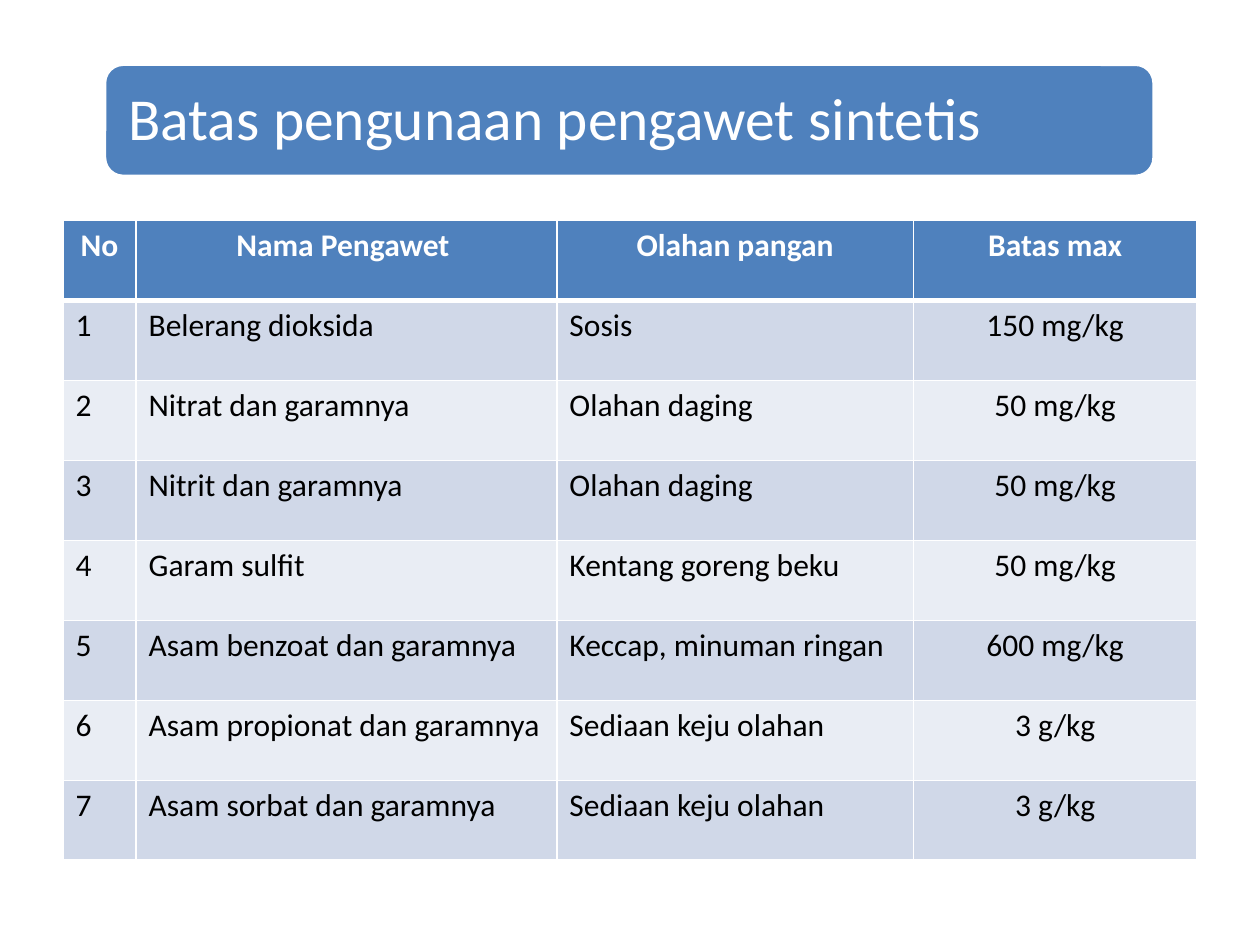
from lxml import etree
from pptx import Presentation
from pptx import util as u
from pptx.dml.color import RGBColor
from pptx.enum import shapes, text
from pptx.oxml import ns

BLUE = RGBColor(0x4F, 0x81, 0xBD)
BAND_DARK = RGBColor(0xD0, 0xD8, 0xE8)
BAND_LIGHT = RGBColor(0xE9, 0xED, 0xF4)
WHITE = RGBColor(0xFF, 0xFF, 0xFF)
BLACK = RGBColor(0, 0, 0)

HEADINGS = ("No", "Nama Pengawet ", "Olahan pangan", "Batas max")
LIMITS = (
    ("Belerang dioksida", "Sosis", "150 mg/kg"),
    ("Nitrat dan garamnya", "Olahan daging", "50 mg/kg"),
    ("Nitrit dan garamnya", "Olahan daging", "50 mg/kg"),
    ("Garam sulfit", "Kentang goreng beku", "50 mg/kg"),
    ("Asam benzoat dan garamnya", "Keccap, minuman ringan", "600 mg/kg"),
    ("Asam propionat dan garamnya", "Sediaan keju olahan", "3 g/kg"),
    ("Asam sorbat dan garamnya", "Sediaan keju olahan", "3 g/kg"),
)
COLUMN_WIDTHS = (0.58, 3.34, 2.83, 2.25)
TABLE_HEIGHT = 5.08


class SlideBuilder:
    font = "Calibri"
    title_size = 34
    table_size = 18

    def __init__(self, page):
        self.page = page

    def add_span(self, para, words, size, color, bold=False):
        span = para.add_run()
        span.text = words
        span.font.name = self.font
        span.font.size = u.Pt(size)
        span.font.color.rgb = color
        span.font.bold = bold

    def banner(self, left, top, width, height):
        box = self.page.shapes.add_shape(
            shapes.MSO_SHAPE.ROUNDED_RECTANGLE,
            *map(u.Inches, (left, top, width, height)))
        box.shadow.inherit = False
        box.fill.solid()
        box.fill.fore_color.rgb = BLUE
        box.line.color.rgb = WHITE
        box.line.width = u.Pt(2)
        self.page.shapes.title.element.addprevious(box.element)

    def title(self, words, left, top, width, height):
        box = self.page.shapes.title
        box.left, box.top = u.Inches(left), u.Inches(top)
        box.width, box.height = u.Inches(width), u.Inches(height)
        frame = box.text_frame
        frame.word_wrap = True
        frame.auto_size = text.MSO_AUTO_SIZE.NONE
        frame.vertical_anchor = text.MSO_ANCHOR.MIDDLE
        frame.margin_left = frame.margin_right = u.Inches(0.14)
        frame.margin_top = frame.margin_bottom = u.Inches(0.14)
        para = frame.paragraphs[0]
        para.alignment = text.PP_ALIGN.LEFT
        para.line_spacing = 0.9
        self.add_span(para, words, self.title_size, WHITE)

    def border(self, cell, side, points):
        properties = cell._tc.get_or_add_tcPr()
        line = etree.SubElement(properties, ns.qn(f"a:ln{side}"), w=str(u.Pt(points)))
        fill = etree.SubElement(line, ns.qn("a:solidFill"))
        etree.SubElement(fill, ns.qn("a:srgbClr"), val=str(WHITE))

    def cell(self, cell, words, row, centered):
        header = row == 0
        for side in "LRTB":
            thick = (side == "B" and header) or (side == "T" and row == 1)
            self.border(cell, side, 3 if thick else 1)
        cell.fill.solid()
        cell.fill.fore_color.rgb = BLUE if header else BAND_DARK if row % 2 else BAND_LIGHT
        para = cell.text_frame.paragraphs[0]
        para.alignment = text.PP_ALIGN.CENTER if centered else text.PP_ALIGN.LEFT
        self.add_span(para, words, self.table_size, WHITE if header else BLACK, header)

    def table(self, rows, left, top, widths, height):
        frame = self.page.shapes.add_table(
            len(rows), len(widths),
            *map(u.Inches, (left, top, sum(widths), height)))
        grid = frame.table
        for column, width in zip(grid.columns, widths):
            column.width = u.Inches(width)
        for row, values in enumerate(rows):
            for column, words in enumerate(values):
                centered = row == 0 or column == len(widths) - 1
                self.cell(grid.cell(row, column), words, row, centered)


def main():
    deck = Presentation()
    deck.slide_width, deck.slide_height = u.Inches(10), u.Inches(7.5)
    builder = SlideBuilder(deck.slides.add_slide(deck.slide_layouts[5]))
    builder.banner(0.83, 0.51, 8.33, 0.89)
    builder.title("Batas pengunaan pengawet sintetis", 0.88, 0.56, 8.25, 0.8)
    numbered = [(str(number), *limit) for number, limit in enumerate(LIMITS, 1)]
    builder.table([HEADINGS, *numbered], 0.5, 1.75, COLUMN_WIDTHS, TABLE_HEIGHT)
    deck.save("out.pptx")


if __name__ == "__main__":
    main()
